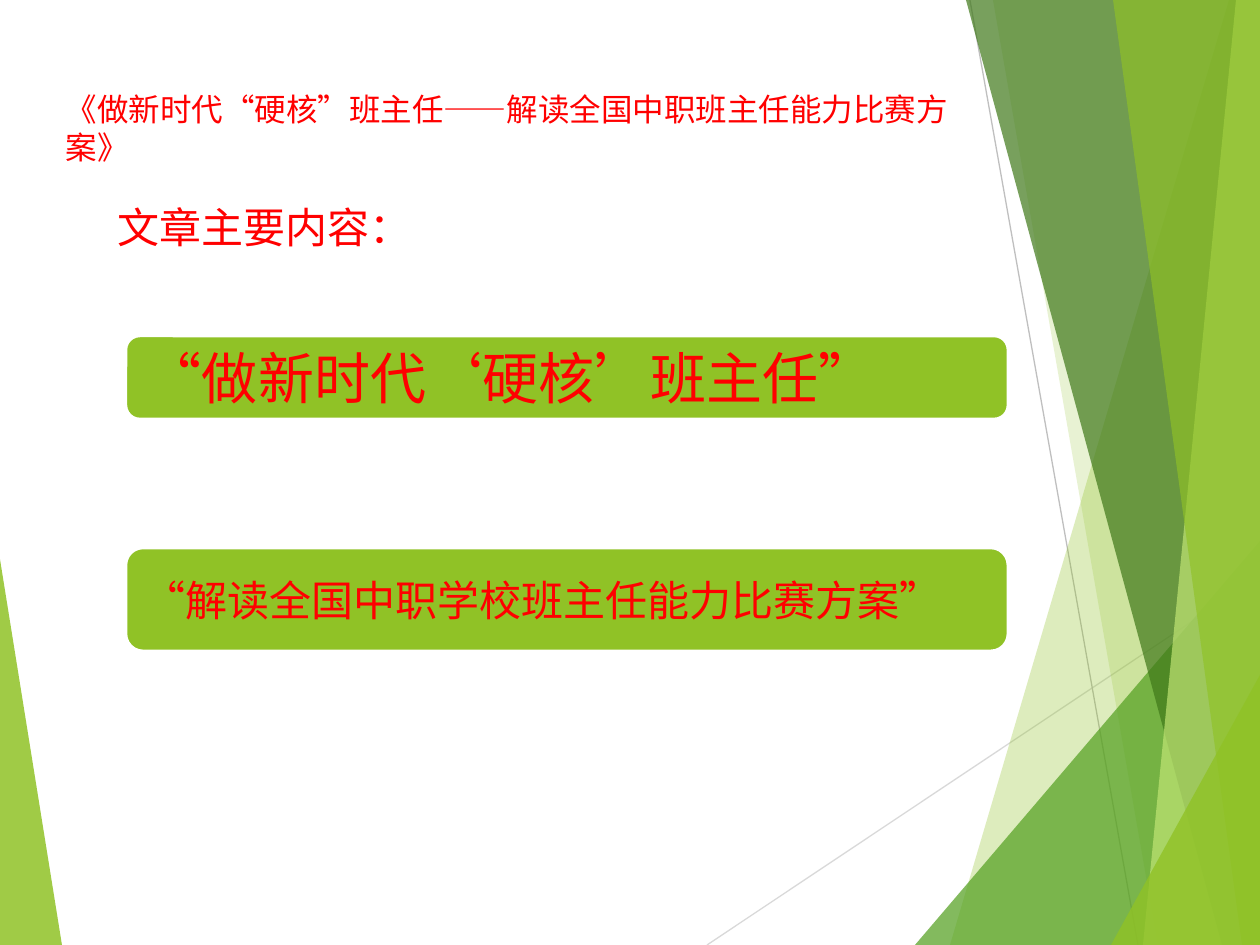
"""Build the slide on the article about class-teacher skills."""
from dataclasses import dataclass

import lxml.etree
import pptx
import pptx.dml.color
import pptx.enum.shapes
import pptx.enum.text
import pptx.oxml.ns
import pptx.util

WIDTH, HEIGHT = 1260, 945
EMU_PER_PX = 914400 / 126
FONT, RED, GREEN = "Lato", "FF0000", "90C226"
ANCHOR = pptx.enum.text.MSO_ANCHOR


@dataclass(frozen=True)
class Facet:
    points: tuple[tuple[int, int], ...]
    color: str
    opacity: int


@dataclass(frozen=True)
class Ray:
    start: tuple[int, int]
    end: tuple[int, int]
    color: str


@dataclass(frozen=True)
class Banner:
    top: int
    height: int
    inset: int
    size: int
    text: str


RAYS = (
    Ray((707, HEIGHT), (WIDTH, 576), "D9D9D9"),
    Ray((970, 0), (1138, HEIGHT), "BFBFBF"),
)
FACETS = (
    Facet(((0, 559), (62, HEIGHT), (0, HEIGHT)), GREEN, 85),
    Facet(((1229, 0), (950, HEIGHT), (WIDTH, HEIGHT), (WIDTH, 0)), GREEN, 30),
    Facet(((993, 0), (1158, HEIGHT), (WIDTH, HEIGHT), (WIDTH, 0)), GREEN, 20),
    Facet(((915, HEIGHT), (WIDTH, 541), (WIDTH, HEIGHT)), "54A021", 72),
    Facet(((966, 0), (1222, HEIGHT), (WIDTH, HEIGHT), (WIDTH, 0)), "3F7819", 70),
    Facet(((1236, 0), (1143, HEIGHT), (WIDTH, HEIGHT), (WIDTH, 0)), "C0E474", 70),
    Facet(((1113, 0), (1242, HEIGHT), (WIDTH, HEIGHT), (WIDTH, 0)), GREEN, 65),
    Facet(((1111, HEIGHT), (WIDTH, 675), (WIDTH, HEIGHT)), GREEN, 80),
)
BANNERS = (
    Banner(336, 83, 16, 32, "“做新时代‘硬核’班主任”"),
    Banner(548, 103, 13, 24, "“解读全国中职学校班主任能力比赛方案”"),
)


def px(value: int) -> int:
    """Turn pixels into EMU."""
    return round(value * EMU_PER_PX)


def rgb(value: str) -> pptx.dml.color.RGBColor:
    """Turn a hex string into a colour."""
    return pptx.dml.color.RGBColor.from_string(value)


def write(s, text: str, size: int, anchor=ANCHOR.TOP, wrap: bool = True) -> None:
    """Put one red, left-aligned paragraph into a shape."""
    tf = s.text_frame
    tf.auto_size = pptx.enum.text.MSO_AUTO_SIZE.NONE
    tf.word_wrap = wrap
    tf.vertical_anchor = anchor
    p = tf.paragraphs[0]
    p.text = text
    p.alignment = pptx.enum.text.PP_ALIGN.LEFT
    p.font.name, p.font.size = FONT, pptx.util.Pt(size)
    p.font.color.rgb = rgb(RED)


def draw_ray(shapes, ray: Ray) -> None:
    """Draw a thin straight line without a shadow."""
    line = shapes.add_connector(
        pptx.enum.shapes.MSO_CONNECTOR.STRAIGHT,
        *map(px, ray.start + ray.end),
    )
    line.line.color.rgb = rgb(ray.color)
    line.line.width = pptx.util.Pt(0.75)
    lxml.etree.SubElement(line._element.spPr, pptx.oxml.ns.qn("a:effectLst"))


def draw_facet(shapes, facet: Facet) -> None:
    """Draw a translucent polygon."""
    first, *rest = facet.points
    builder = shapes.build_freeform(*first, scale=EMU_PER_PX)
    builder.add_line_segments(rest, close=True)
    s = builder.convert_to_shape()
    s.shadow.inherit = False
    s.line.fill.background()
    s.fill.solid()
    s.fill.fore_color.rgb = rgb(facet.color)
    color = s._element.spPr.find(".//" + pptx.oxml.ns.qn("a:srgbClr"))
    alpha = lxml.etree.SubElement(color, pptx.oxml.ns.qn("a:alpha"))
    alpha.set("val", str(facet.opacity * 1000))


def draw_banner(shapes, banner: Banner) -> None:
    """Draw a rounded green bar holding its heading."""
    s = shapes.add_shape(
        pptx.enum.shapes.MSO_SHAPE.ROUNDED_RECTANGLE,
        px(126), px(banner.top), px(882), px(banner.height),
    )
    s.shadow.inherit = False
    s.fill.solid()
    s.fill.fore_color.rgb = rgb(GREEN)
    s.line.color.rgb = rgb("FFFFFF")
    s.line.width = pptx.util.Pt(1.5)
    write(s, banner.text, banner.size, ANCHOR.MIDDLE)
    tf = s.text_frame
    tf.margin_left = tf.margin_right = px(banner.inset)
    tf.margin_top = tf.margin_bottom = px(banner.inset)


def main() -> None:
    """Build and save the presentation."""
    prs = pptx.Presentation()
    prs.slide_width, prs.slide_height = px(WIDTH), px(HEIGHT)
    slide = prs.slides.add_slide(prs.slide_layouts[5])
    shapes = slide.shapes

    title = shapes.title
    title.left, title.top, title.width, title.height = map(px, (53, 84, 924, 73))
    write(title, "《做新时代“硬核”班主任——解读全国中职班主任能力比赛方案》", 18)

    left_facet, *right_facets = FACETS
    draw_facet(shapes, left_facet)
    for ray in RAYS:
        draw_ray(shapes, ray)
    for facet in right_facets:
        draw_facet(shapes, facet)
    for banner in BANNERS:
        draw_banner(shapes, banner)

    intro = shapes.add_textbox(*map(px, (105, 195, 318, 64)))
    write(intro, "文章主要内容：", 24, wrap=False)
    prs.save("out.pptx")


if __name__ == "__main__":
    main()
